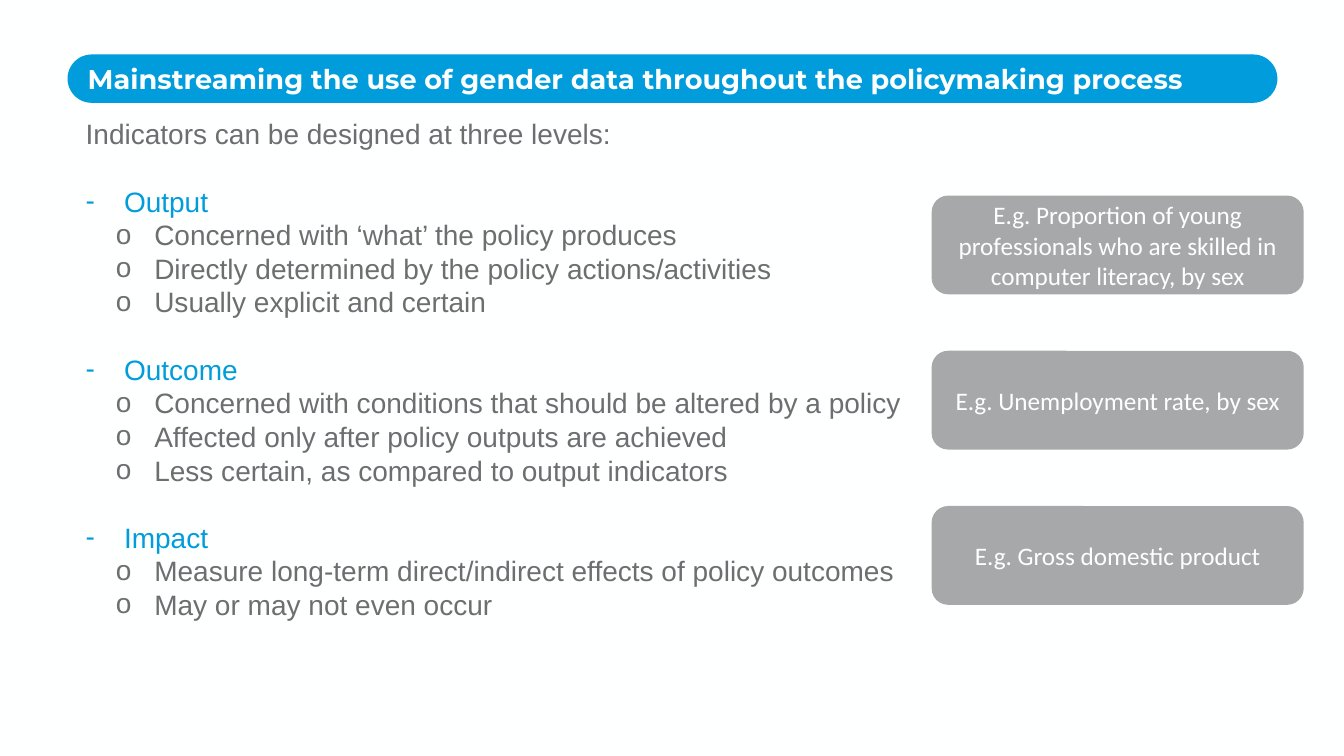
from lxml import etree
from pptx import Presentation
from pptx.dml.color import RGBColor
from pptx.enum.shapes import MSO_SHAPE
from pptx.enum.text import MSO_ANCHOR, MSO_AUTO_SIZE, PP_ALIGN
from pptx.oxml.ns import qn
from pptx.util import Inches, Pt

ROUNDED = MSO_SHAPE.ROUNDED_RECTANGLE
TOP, MIDDLE = MSO_ANCHOR.TOP, MSO_ANCHOR.MIDDLE
LEFT, CENTER = PP_ALIGN.LEFT, PP_ALIGN.CENTER
NO_AUTOFIT = MSO_AUTO_SIZE.NONE

COLORS = {"white": "FEFFFF", "blue": "009CDB", "text": "6D6E70", "box": "A7A8A9"}

TITLE = "Mainstreaming the use of gender data throughout the policymaking process"
INTRO = "Indicators can be designed at three levels:"
# Level name, its characteristics, example indicator
LEVELS = [
    ("Output",
     ["Concerned with ‘what’ the policy produces",
      "Directly determined by the policy actions/activities",
      "Usually explicit and certain"],
     "E.g. Proportion of young professionals who are skilled in computer literacy, by sex"),
    ("Outcome",
     ["Concerned with conditions that should be altered by a policy",
      "Affected only after policy outputs are achieved",
      "Less certain, as compared to output indicators"],
     "E.g. Unemployment rate, by sex"),
    ("Impact",
     ["Measure long-term direct/indirect effects of policy outcomes",
      "May or may not even occur"],
     "E.g. Gross domestic product"),
]


def color(name):
    return RGBColor.from_string(COLORS[name])


def style_font(paragraph, name, size, color_name, bold=False):
    font = paragraph.font
    font.name, font.size, font.bold = name, Pt(size), bold
    font.color.rgb = color(color_name)


def place_placeholder(placeholder, left, top, width, height):
    placeholder.left, placeholder.top = Inches(left), Inches(top)
    placeholder.width, placeholder.height = Inches(width), Inches(height)
    frame = placeholder.text_frame
    frame.margin_left = frame.margin_right = frame.margin_top = frame.margin_bottom = 0
    frame.word_wrap = True
    frame.auto_size = NO_AUTOFIT
    frame.vertical_anchor = TOP
    return frame


def add_rounded_box(slide, left, top, width, height, fill):
    shape = slide.shapes.add_shape(
        ROUNDED, Inches(left), Inches(top), Inches(width), Inches(height))
    shape.shadow.inherit = False
    shape.fill.solid()
    shape.fill.fore_color.rgb = color(fill)
    shape.line.fill.background()
    return shape


def set_bullet(paragraph, character, indent):
    properties = paragraph._p.get_or_add_pPr()
    hanging = Inches(0.38) if character else 0
    properties.set("marL", str(Inches(indent)))
    properties.set("indent", str(-hanging))
    if character:
        etree.SubElement(properties, qn("a:buFont")).set("typeface", "Arial")
        etree.SubElement(properties, qn("a:buChar")).set("char", character)
    else:
        etree.SubElement(properties, qn("a:buNone"))


def add_list_line(frame, text, color_name="text", bullet=None, indent=0, level=0, before=0):
    first = not frame.text
    paragraph = frame.paragraphs[0] if first else frame.add_paragraph()
    paragraph.text = text
    paragraph.level = level
    set_bullet(paragraph, bullet, indent)
    paragraph.line_spacing = Pt(24)
    paragraph.space_before = Pt(before)
    style_font(paragraph, "Arial", 20, color_name)


def add_title(slide):
    bar = add_rounded_box(slide, 0.67, 0.54, 12, 0.48, "blue")
    bar.adjustments[0] = 0.5
    bar.element.getparent().insert(2, bar.element)  # behind the title
    frame = place_placeholder(slide.shapes.title, 0.87, 0.62, 11.61, 0.65)
    frame.text = TITLE
    paragraph = frame.paragraphs[0]
    paragraph.alignment = LEFT
    style_font(paragraph, "Montserrat", 19.4, "white", bold=True)


def add_levels(slide):
    frame = place_placeholder(slide.placeholders[1], 0.85, 1.16, 11.61, 5.39)
    add_list_line(frame, INTRO)
    for name, points, _ in LEVELS:
        add_list_line(frame, name, "blue", "-", 0.38, before=24)
        for point in points:
            add_list_line(frame, point, bullet="o", indent=0.68, level=1)


def add_example(slide, top, text):
    box = add_rounded_box(slide, 9.24, top, 3.69, 0.98, "box")
    frame = box.text_frame
    frame.word_wrap = True
    frame.vertical_anchor = MIDDLE
    frame.text = text
    paragraph = frame.paragraphs[0]
    paragraph.alignment = CENTER
    style_font(paragraph, "Calibri", 18, "white")


def main():
    presentation = Presentation()
    presentation.slide_width, presentation.slide_height = Inches(13.33), Inches(7.5)
    slide = presentation.slides.add_slide(presentation.slide_layouts[1])
    slide.background.fill.solid()
    slide.background.fill.fore_color.rgb = color("white")

    add_title(slide)
    add_levels(slide)
    # One example box per level, evenly spaced
    for row, (_, _, example) in enumerate(LEVELS):
        add_example(slide, 1.94 + 1.54 * row, example)

    presentation.save("out.pptx")


if __name__ == "__main__":
    main()
